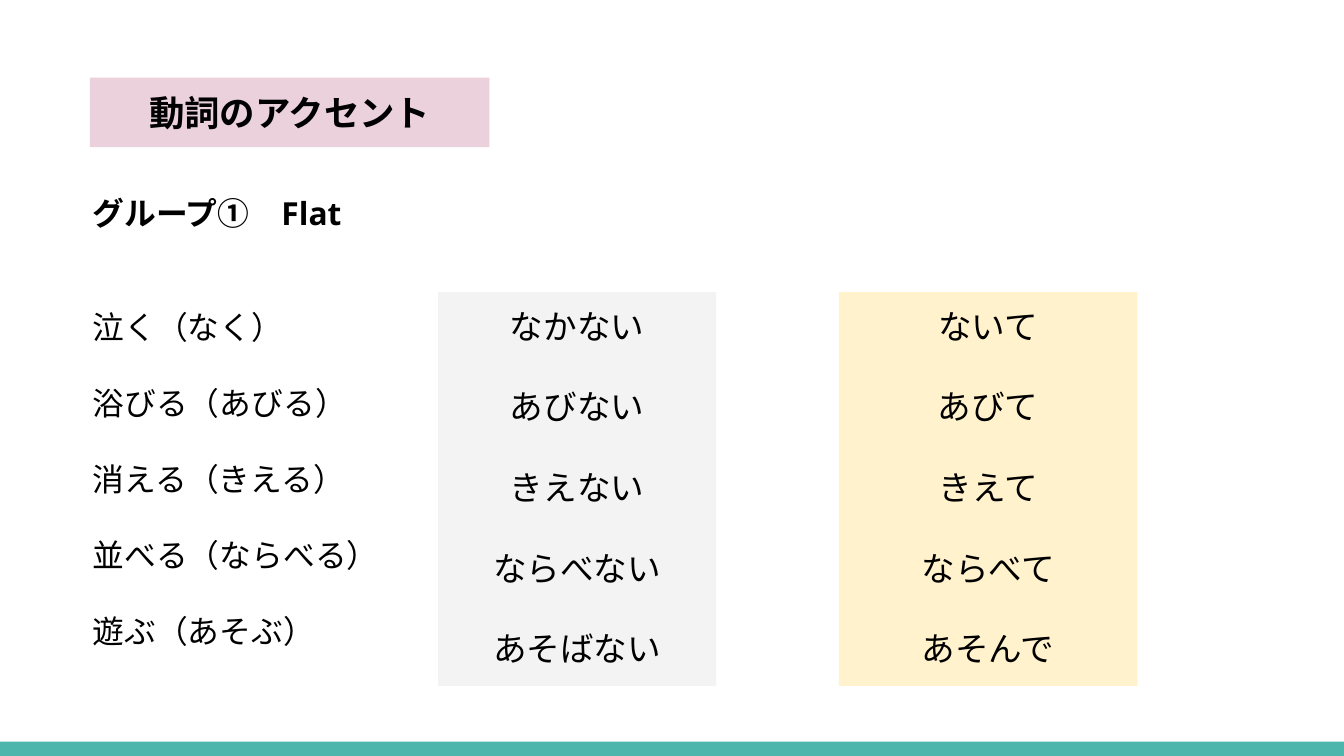
"""Build the verb accent slide: a title, a list of verbs and two columns of forms."""
from dataclasses import dataclass

from lxml.etree import SubElement
from pptx import Presentation
from pptx.dml.color import RGBColor
from pptx.enum.shapes import MSO_SHAPE
from pptx.enum.text import MSO_ANCHOR, MSO_AUTO_SIZE, PP_ALIGN
from pptx.oxml.ns import qn
from pptx.shapes.autoshape import Shape
from pptx.slide import Slide
from pptx.util import Pt

FONT = "Open Sans"
LEADING = 1.2
COLORS = {
    "text": "000000",
    "bar": "4DB6AC",
    "title": "EAD1DC",
    "negative": "F3F3F3",
    "te_form": "FFF2CC",
}


@dataclass
class Box:
    left: float
    top: float
    width: float
    height: float


@dataclass
class Column:
    box: Box
    color: str
    words: list[str]


TITLE_BOX = Box(48.2, 41.6, 214, 37.2)
VERB_BOX = Box(42.4, 96.5, 183, 303)
BAR_BOX = Box(0, 397.4, 720, 7.6)
VERBS = ["泣く（なく）", "浴びる（あびる）", "消える（きえる）", "並べる（ならべる）", "遊ぶ（あそぶ）"]
COLUMNS = [
    Column(Box(234.7, 156.5, 149, 211), "negative",
           ["なかない", "あびない", "きえない", "ならべない", "あそばない"]),
    Column(Box(449.4, 156.5, 160, 211), "te_form",
           ["ないて", "あびて", "きえて", "ならべて", "あそんで"]),
]


def place(sp: Shape, box: Box) -> None:
    """Move and size a shape."""
    sp.left, sp.top = Pt(box.left), Pt(box.top)
    sp.width, sp.height = Pt(box.width), Pt(box.height)


def paint(sp: Shape, color: str) -> None:
    """Fill a shape with a named colour and no outline."""
    sp.fill.solid()
    sp.fill.fore_color.rgb = RGBColor.from_string(COLORS[color])
    sp.line.fill.background()


def add_rect(slide: Slide, box: Box, color: str) -> Shape:
    """Add a plain rectangle."""
    sp = slide.shapes.add_shape(MSO_SHAPE.RECTANGLE, 0, 0, 0, 0)
    place(sp, box)
    paint(sp, color)
    sp.shadow.inherit = False
    return sp


def write(sp: Shape, lines: list[str], size: float, align: PP_ALIGN,
          anchor: MSO_ANCHOR = MSO_ANCHOR.TOP, bold_first: bool = False) -> None:
    """Set the lines of a shape, one line height apart from each other."""
    tf = sp.text_frame
    tf.text = "\n".join(lines)
    tf.word_wrap = True
    tf.auto_size = MSO_AUTO_SIZE.NONE
    tf.vertical_anchor = anchor
    tf.margin_left = tf.margin_right = tf.margin_top = tf.margin_bottom = Pt(7.2)
    for i, p in enumerate(tf.paragraphs):
        p.alignment = align
        p.line_spacing = Pt(size * LEADING)
        p.space_before = Pt(size * LEADING if i else 0)
        pPr = p._p.get_or_add_pPr()
        pPr.set("marL", "0")
        pPr.set("indent", "0")
        SubElement(pPr, qn("a:buNone"))
        for r in p.runs:
            r.font.size = Pt(size)
            r.font.bold = bold_first and i == 0
            r.font.color.rgb = RGBColor.from_string(COLORS["text"])
            r.font.name = FONT
            SubElement(r._r.get_or_add_rPr(), qn("a:ea"), typeface=FONT)


def main() -> None:
    """Build and save the slide."""
    prs = Presentation()
    prs.slide_width, prs.slide_height = Pt(720), Pt(405)
    slide = prs.slides.add_slide(prs.slide_layouts[1])
    add_rect(slide, BAR_BOX, "bar")

    title = slide.shapes.title
    place(title, TITLE_BOX)
    paint(title, "title")
    write(title, ["動詞のアクセント"], 19, PP_ALIGN.CENTER, MSO_ANCHOR.MIDDLE, bold_first=True)

    body = slide.placeholders[1]
    place(body, VERB_BOX)
    write(body, ["グループ①　Flat", *VERBS], 17, PP_ALIGN.LEFT, bold_first=True)
    body.text_frame.paragraphs[1].space_before = Pt(2 * 17 * LEADING)

    for column in COLUMNS:
        sp = add_rect(slide, column.box, column.color)
        write(sp, column.words, 18, PP_ALIGN.CENTER)

    prs.save("out.pptx")


if __name__ == "__main__":
    main()
